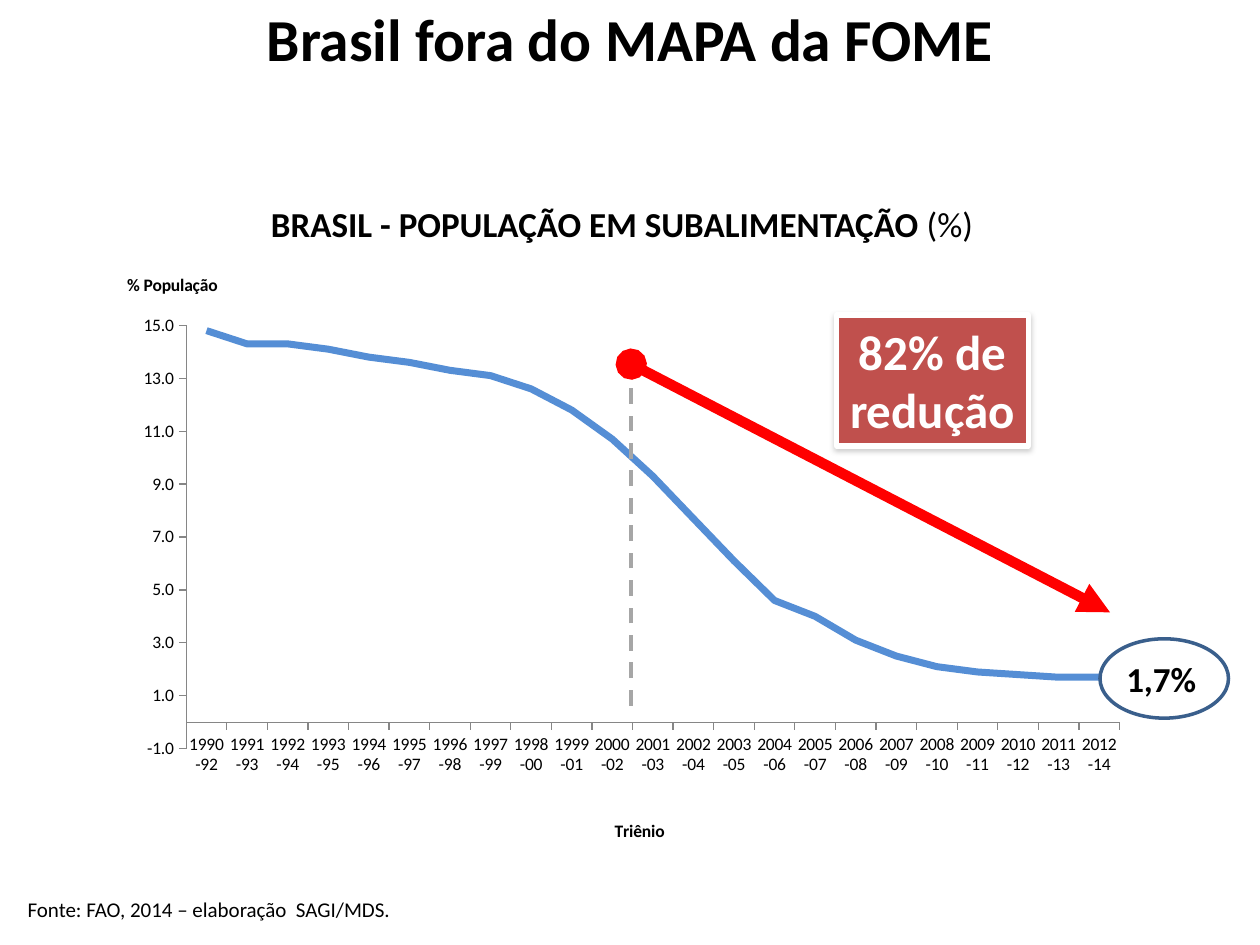
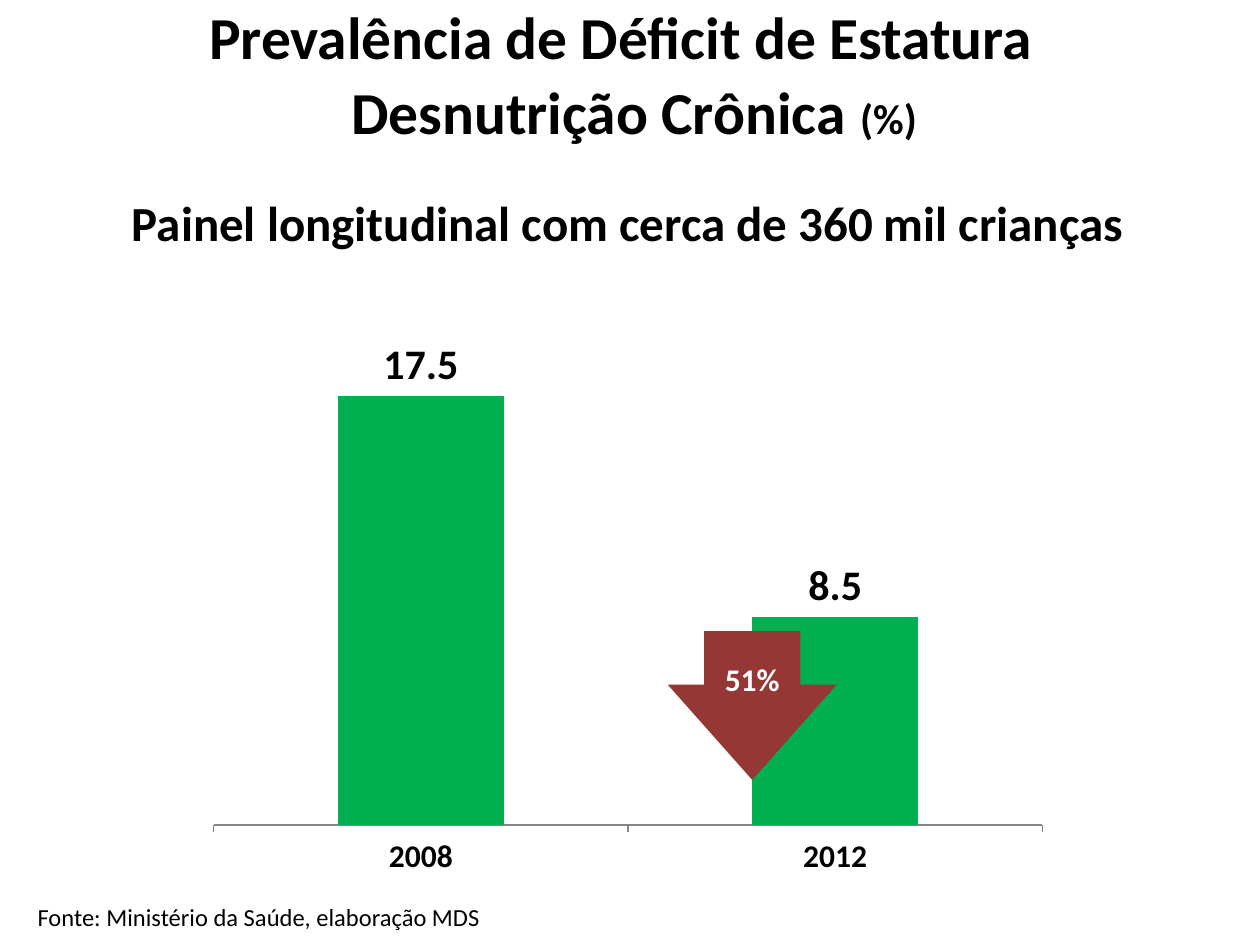
"""Build two slides on the fall of undernourishment and stunting in Brazil."""
from lxml import etree
from pptx import Presentation
from pptx.chart.data import CategoryChartData
from pptx.dml.color import RGBColor
from pptx.enum.chart import XL_CHART_TYPE, XL_LABEL_POSITION, XL_TICK_MARK
from pptx.enum.dml import MSO_LINE
from pptx.enum.shapes import MSO_CONNECTOR, MSO_SHAPE
from pptx.enum.text import MSO_ANCHOR, PP_ALIGN
from pptx.oxml.ns import qn
from pptx.util import Inches, Pt

LINE_CHART, COLUMN_CHART = XL_CHART_TYPE.LINE, XL_CHART_TYPE.COLUMN_CLUSTERED
OUTSIDE_END = XL_LABEL_POSITION.OUTSIDE_END
TICK_OUTSIDE, TICK_NONE = XL_TICK_MARK.OUTSIDE, XL_TICK_MARK.NONE
DASH, STRAIGHT = MSO_LINE.DASH, MSO_CONNECTOR.STRAIGHT
ELLIPSE, RECTANGLE, RIGHT_ARROW = MSO_SHAPE.OVAL, MSO_SHAPE.RECTANGLE, MSO_SHAPE.RIGHT_ARROW
TOP, MIDDLE = MSO_ANCHOR.TOP, MSO_ANCHOR.MIDDLE
LEFT, CENTER = PP_ALIGN.LEFT, PP_ALIGN.CENTER

BLACK = RGBColor(0x00, 0x00, 0x00)
WHITE = RGBColor(0xFF, 0xFF, 0xFF)
AXIS_GRAY = RGBColor(0x86, 0x86, 0x86)
DASH_GRAY = RGBColor(0xA6, 0xA6, 0xA6)
CURVE_BLUE = RGBColor(0x55, 0x8E, 0xD5)
OUTLINE_BLUE = RGBColor(0x3A, 0x5F, 0x8C)
BOX_RED = RGBColor(0xC0, 0x50, 0x4D)
ARROW_RED = RGBColor(0xFF, 0x00, 0x00)
DOWN_RED = RGBColor(0x95, 0x37, 0x35)
BAR_GREEN = RGBColor(0x00, 0xB0, 0x50)

FONT = "Calibri"
COLUMNS, ROWS = 10, 7.5
TITLE_SIZE = 34
SLIM_INSETS = (0.04, 0.02)

HUNGER_TITLE = [[("Brasil fora do MAPA da FOME", TITLE_SIZE, True)]]
HUNGER_SUBTITLE = [[("BRASIL - POPULAÇÃO EM SUBALIMENTAÇÃO", 20, True), (" (%)", 20, False), (" ", 40, True)]]
HUNGER_SOURCE = [[("Fonte: FAO, 2014 – elaboração  SAGI/MDS.", 12, False)]]
REDUCTION = [[("82% de", 28, True)], [("redução", 28, True)]]
LATEST_RATE = [[("1,7%", 20, True)]]
TRIENNIA = [f"{year}-{(year + 2) % 100:02d}" for year in range(1990, 2013)]
HUNGER_RATES = [14.8, 14.3, 14.3, 14.1, 13.8, 13.6, 13.3, 13.1, 12.6, 11.8, 10.7, 9.3,
                7.7, 6.1, 4.6, 4, 3.1, 2.5, 2.1, 1.9, 1.8, 1.7, 1.7]
DROP_START, DROP_END, DASH_FOOT = (5.01, 2.89), (8.81, 4.86), (5.01, 5.6)

STUNTING_TITLE = [
    [("Prevalência de Déficit de Estatura ", TITLE_SIZE, True)],
    [(" Desnutrição Crônica", TITLE_SIZE, True), (" ", 36, True), ("(%)", 24, True)],
]
STUNTING_SUBTITLE = [[("Painel longitudinal com cerca de 360 mil crianças", 28, True)]]
STUNTING_SOURCE = [[("Fonte: Ministério da Saúde, elaboração MDS", 14, False)]]
STUNTING_DROP = [[("51%", 18, True)]]
STUNTING_RATES = {"2008": 17.5, "2012": 8.5}


def grid(*cells):
    """Turn grid cells into slide lengths."""
    return [Inches(cell) for cell in cells]


def write(shape, lines, align=LEFT, color=BLACK, anchor=TOP, wrap=True, insets=(0.1, 0.05)):
    """Fill a shape with paragraphs of (text, size, bold) runs."""
    frame = shape.text_frame
    frame.word_wrap = wrap
    frame.vertical_anchor = anchor
    frame.margin_left = frame.margin_right = Inches(insets[0])
    frame.margin_top = frame.margin_bottom = Inches(insets[1])
    for index, line in enumerate(lines):
        paragraph = frame.paragraphs[0] if index == 0 else frame.add_paragraph()
        paragraph.alignment = align
        for text, size, bold in line:
            run = paragraph.add_run()
            run.text = text
            run.font.name, run.font.size, run.font.bold = FONT, Pt(size), bold
            run.font.color.rgb = color


def add_text(slide, box, lines, align=LEFT, **style):
    """Add a text box."""
    write(slide.shapes.add_textbox(*grid(*box)), lines, align, **style)


def add_shape(slide, kind, box, fill=None, line=None, width=1):
    """Add a preset shape without a shadow."""
    shape = slide.shapes.add_shape(kind, *grid(*box))
    shape.shadow.inherit = False
    if fill is None:
        shape.fill.background()
    else:
        shape.fill.solid()
        shape.fill.fore_color.rgb = fill
    if line is None:
        shape.line.fill.background()
    else:
        shape.line.color.rgb = line
        shape.line.width = Pt(width)
    return shape


def add_soft_shadow(shape):
    """Give a shape a short grey shadow below it."""
    effects = shape.element.spPr.find(qn("a:effectLst"))
    shadow = etree.SubElement(effects, qn("a:outerShdw"), blurRad=str(Pt(3.1)), dist=str(Pt(1.6)),
                              dir="5400000", algn="t", rotWithShape="0")
    color = etree.SubElement(shadow, qn("a:srgbClr"), val="808080")
    etree.SubElement(color, qn("a:alpha"), val="38000")


def add_line(slide, start, end, color, width, dash=None, ends=()):
    """Add a straight connector with optional dash and line ends."""
    connector = slide.shapes.add_connector(STRAIGHT, *grid(*start, *end))
    connector.line.color.rgb = color
    connector.line.width = Pt(width)
    if dash is not None:
        connector.line.dash_style = dash
    properties = connector.element.spPr
    for tag, kind in ends:
        etree.SubElement(properties.find(qn("a:ln")), qn(tag), type=kind)
    etree.SubElement(properties, qn("a:effectLst"))


def place(element, index, inner=False, **shares):
    """Set a manual layout, in shares of the chart, on a chart element."""
    for layout in element.findall(qn("c:layout")):
        element.remove(layout)
    layout = etree.Element(qn("c:layout"))
    manual = etree.SubElement(layout, qn("c:manualLayout"))
    if inner:
        etree.SubElement(manual, qn("c:layoutTarget"), val="inner")
    for mode in ("xMode", "yMode"):
        etree.SubElement(manual, qn(f"c:{mode}"), val="edge")
    for name, share in shares.items():
        etree.SubElement(manual, qn(f"c:{name}"), val=str(share))
    element.insert(index, layout)


def add_chart(slide, kind, box, categories, values, plot):
    """Add a one-series chart with its shared style."""
    data = CategoryChartData()
    data.categories = categories
    data.add_series("Series 1", values)
    chart = slide.shapes.add_chart(kind, *grid(*box), data).chart
    chart.has_title = chart.has_legend = False
    chart.font.name, chart.font.size = FONT, Pt(10)
    chart.font.color.rgb = BLACK
    chart.plots[0].vary_by_categories = False
    chart.value_axis.has_major_gridlines = False
    for axis in (chart.category_axis, chart.value_axis):
        axis.major_tick_mark, axis.minor_tick_mark = TICK_OUTSIDE, TICK_NONE
        axis.format.line.color.rgb = AXIS_GRAY
        axis.format.line.width = Pt(0.75)
    place(chart.element.find(".//" + qn("c:plotArea")), 0, True, **plot)
    return chart


def title_axis(axis, text, x, y):
    """Put a level title on an axis at a share of the chart."""
    axis.has_title = True
    title = axis.axis_title
    title.text_frame.text = text
    font = title.text_frame.paragraphs[0].runs[0].font
    font.name, font.size, font.bold = FONT, Pt(10), True
    font.color.rgb = BLACK
    body = title.element.find(".//" + qn("a:bodyPr"))
    body.set("rot", "0")
    body.set("vert", "horz")
    place(title.element, 1, x=x, y=y)


def build_hunger(slide):
    """Show the share of undernourished people by triennium."""
    chart = add_chart(slide, LINE_CHART, (0.82, 1.95, 8.23, 4.87), TRIENNIA, HUNGER_RATES,
                      dict(x=0.08, y=0.13, w=0.9, h=0.69))
    series = chart.plots[0].series[0]
    series.smooth = False
    series.format.line.color.rgb = CURVE_BLUE
    series.format.line.width = Pt(4)
    axis = chart.value_axis
    axis.minimum_scale, axis.maximum_scale, axis.major_unit = -1, 15, 2
    axis.tick_labels.number_format = "0.0"
    axis.tick_labels.number_format_is_linked = False
    title_axis(axis, "% População", 0.02, 0.04)
    title_axis(chart.category_axis, "Triênio", 0.49, 0.93)

    add_shape(slide, ELLIPSE, (8.73, 5.07, 1.02, 0.63), line=OUTLINE_BLUE, width=2)
    add_text(slide, (0, 1.46, COLUMNS, 0.4), HUNGER_SUBTITLE, CENTER, anchor=MIDDLE)
    add_text(slide, (0.12, 7.07, 5.12, 0.3), HUNGER_SOURCE)
    add_text(slide, (0, -0.03, COLUMNS, 0.67), HUNGER_TITLE, CENTER)
    add_line(slide, DASH_FOOT, DROP_START, DASH_GRAY, 2.25, DASH)
    reduction = add_shape(slide, RECTANGLE, (6.64, 2.5, 1.52, 1.04), BOX_RED, WHITE, 3)
    add_soft_shadow(reduction)
    write(reduction, REDUCTION, CENTER, WHITE, wrap=False)
    add_line(slide, DROP_START, DROP_END, ARROW_RED, 6,
             ends=(("a:headEnd", "oval"), ("a:tailEnd", "triangle")))
    add_text(slide, (8.84, 5.17, 0.79, 0.44), LATEST_RATE)


def build_stunting(slide):
    """Compare chronic malnutrition in two years."""
    add_text(slide, (0, -0.02, 9.96, 1.25), STUNTING_TITLE, CENTER, insets=SLIM_INSETS)
    add_text(slide, (0, 1.51, 9.96, 0.51), STUNTING_SUBTITLE, CENTER, insets=SLIM_INSETS)
    add_text(slide, (0.2, 7.11, 3.74, 0.34), STUNTING_SOURCE, wrap=False)
    chart = add_chart(slide, COLUMN_CHART, (1.56, 2.57, 6.85, 4.47), list(STUNTING_RATES),
                      list(STUNTING_RATES.values()), dict(x=0.02, y=0.02, w=0.96, h=0.87))
    chart.value_axis.minimum_scale, chart.value_axis.maximum_scale = 0, 20
    chart.value_axis.visible = False
    plot = chart.plots[0]
    plot.gap_width = 150
    fill = plot.series[0].format.fill
    fill.solid()
    fill.fore_color.rgb = BAR_GREEN
    plot.has_data_labels = True
    labels = plot.data_labels
    labels.show_value, labels.position = True, OUTSIDE_END
    for font, size in ((labels.font, 24), (chart.category_axis.tick_labels.font, 18)):
        font.name, font.size, font.bold = FONT, Pt(size), True
        font.color.rgb = BLACK

    arrow = add_shape(slide, RIGHT_ARROW, (5.38, 4.93, 1.18, 1.34), DOWN_RED)
    arrow.rotation = 90
    arrow.adjustments[0], arrow.adjustments[1] = 0.57, 0.64
    write(arrow, STUNTING_DROP, CENTER, WHITE, MIDDLE)
    arrow.element.txBody.find(qn("a:bodyPr")).set("vert", "vert270")


def main():
    """Build and save the presentation."""
    presentation = Presentation()
    presentation.slide_width, presentation.slide_height = grid(COLUMNS, ROWS)
    blank = presentation.slide_layouts[6]
    for build in (build_hunger, build_stunting):
        build(presentation.slides.add_slide(blank))
    presentation.save("out.pptx")


if __name__ == "__main__":
    main()
